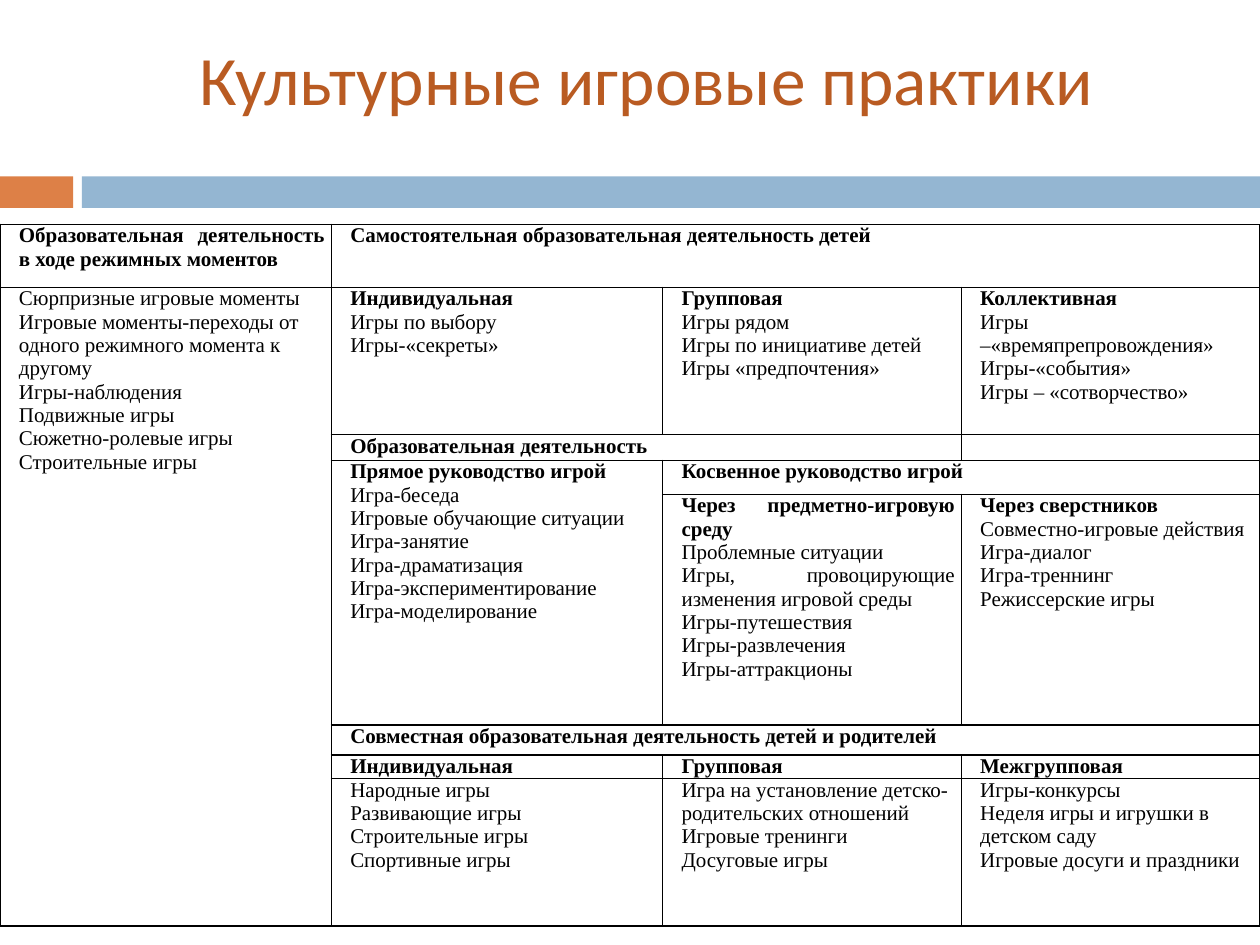
import lxml.etree
import pptx
import pptx.dml.color
import pptx.enum.shapes
import pptx.enum.text
import pptx.oxml.ns
import pptx.util

Inches, Pt = pptx.util.Inches, pptx.util.Pt
Align = pptx.enum.text.PP_ALIGN
qn = pptx.oxml.ns.qn


def paint(color_format, hex_color):
    color_format.rgb = pptx.dml.color.RGBColor.from_string(hex_color)


def outline(cell, hex_color, points):
    """Draw a solid line on all four sides of a table cell."""
    properties = cell._tc.get_or_add_tcPr()
    for side in ("a:lnL", "a:lnR", "a:lnT", "a:lnB"):
        line = lxml.etree.SubElement(properties, qn(side), w=str(Pt(points)))
        fill = lxml.etree.SubElement(line, qn("a:solidFill"))
        lxml.etree.SubElement(fill, qn("a:srgbClr"), val=hex_color)


deck = pptx.Presentation()
deck.slide_width, deck.slide_height = Inches(10), Inches(7.5)
slide = deck.slides.add_slide(deck.slide_layouts[5])

# Band under the heading: a short accent and a long bar
band_top, band_height = Inches(1.4), Inches(0.25)
accent_width, bar_left = Inches(0.58), Inches(0.65)
for left, width, color in (
    (0, accent_width, "DD8047"),
    (bar_left, deck.slide_width - bar_left, "94B6D2"),
):
    band = slide.shapes.add_shape(
        pptx.enum.shapes.MSO_SHAPE.RECTANGLE, left, band_top, width, band_height)
    band.shadow.inherit = False
    band.fill.solid()
    paint(band.fill.fore_color, color)
    band.line.fill.background()

heading = slide.shapes.title
heading.left, heading.top = Inches(0.67), Inches(0.44)
heading.width, heading.height = Inches(8.92), Inches(1.08)
heading.text_frame.auto_size = pptx.enum.text.MSO_AUTO_SIZE.NONE
heading.text_frame.vertical_anchor = pptx.enum.text.MSO_ANCHOR.MIDDLE
heading_line = heading.text_frame.paragraphs[0]
heading_line.alignment = Align.CENTER
words = heading_line.add_run()
words.text = "Культурные игровые практики"
words.font.size, words.font.name = Pt(39.6), "Calibri"
paint(words.font.color, "B95B22")
heading_line.add_line_break()

# (row, column, rows spanned, columns spanned, bold heading, games)
practices = [
    (0, 0, 1, 1, "Образовательная деятельность в ходе режимных моментов", []),
    (0, 1, 1, 3, "Самостоятельная образовательная деятельность детей", []),
    (1, 0, 7, 1, "", [
        "Сюрпризные игровые моменты",
        "Игровые моменты-переходы от одного режимного момента к другому",
        "Игры-наблюдения", "Подвижные игры", "Сюжетно-ролевые игры",
        "Строительные игры"]),
    (1, 1, 1, 1, "Индивидуальная", ["Игры по выбору", "Игры-«секреты»"]),
    (1, 2, 1, 1, "Групповая", [
        "Игры рядом", "Игры по инициативе детей", "Игры «предпочтения»"]),
    (1, 3, 1, 1, "Коллективная", [
        "Игры –«времяпрепровождения»", "Игры-«события»",
        "Игры – «сотворчество»"]),
    (2, 1, 1, 2, "Образовательная деятельность", []),
    (3, 1, 2, 1, "Прямое руководство игрой", [
        "Игра-беседа", "Игровые обучающие ситуации", "Игра-занятие",
        "Игра-драматизация", "Игра-экспериментирование",
        "Игра-моделирование"]),
    (3, 2, 1, 2, "Косвенное руководство игрой", []),
    (4, 2, 1, 1, "Через предметно-игровую среду", [
        "Проблемные ситуации", "Игры, провоцирующие изменения игровой среды",
        "Игры-путешествия", "Игры-развлечения", "Игры-аттракционы"]),
    (4, 3, 1, 1, "Через сверстников", [
        "Совместно-игровые действия", "Игра-диалог", "Игра-треннинг",
        "Режиссерские игры"]),
    (5, 1, 1, 3, "Совместная образовательная деятельность детей и родителей", []),
    (6, 1, 1, 1, "Индивидуальная", []),
    (6, 2, 1, 1, "Групповая", []),
    (6, 3, 1, 1, "Межгрупповая", []),
    (7, 1, 1, 1, "", [
        "Народные игры", "Развивающие игры", "Строительные игры",
        "Спортивные игры"]),
    (7, 2, 1, 1, "", [
        "Игра на установление детско-родительских отношений",
        "Игровые тренинги", "Досуговые игры"]),
    (7, 3, 1, 1, "", [
        "Игры-конкурсы", "Неделя игры и игрушки в детском саду",
        "Игровые досуги и праздники"]),
]
justified = {(0, 0), (4, 2)}
column_widths = [2.63, 2.63, 2.37, 2.37]
row_heights = [0.5, 1.17, 0.17, 0.27, 1.83, 0.24, 0.17, 1.17]

grid = slide.shapes.add_table(
    len(row_heights), len(column_widths), 0, Inches(1.78),
    deck.slide_width, Inches(sum(row_heights))).table
grid.first_row = grid.horz_banding = False
for column, width in zip(grid.columns, column_widths):
    column.width = Inches(width)
for row, height in zip(grid.rows, row_heights):
    row.height = Inches(height)

for cell in grid.iter_cells():
    cell.margin_left = cell.margin_right = Inches(0.05)
    cell.margin_top = cell.margin_bottom = 0
    outline(cell, "000000", 1)
    cell.fill.background()
    # Keeps cells without text from stretching the low rows
    lxml.etree.SubElement(
        cell.text_frame.paragraphs[0]._p, qn("a:endParaRPr"), sz="1200")

for row, column, row_span, column_span, group, games in practices:
    cell = grid.cell(row, column)
    if row_span * column_span > 1:
        cell.merge(grid.cell(row + row_span - 1, column + column_span - 1))
    lines = [(group, True)] if group else []
    lines += [(game, False) for game in games]
    for index, (wording, bold) in enumerate(lines):
        frame = cell.text_frame
        paragraph = frame.add_paragraph() if index else frame.paragraphs[0]
        paragraph.alignment = (
            Align.JUSTIFY if (row, column) in justified else Align.LEFT)
        paragraph._p.get_or_add_pPr().set("marL", str(Inches(0.1)))
        run = paragraph.add_run()
        run.text = wording
        run.font.size, run.font.name = Pt(12), "Times New Roman"
        run.font.bold = bold
        paint(run.font.color, "000000")

deck.save("out.pptx")
